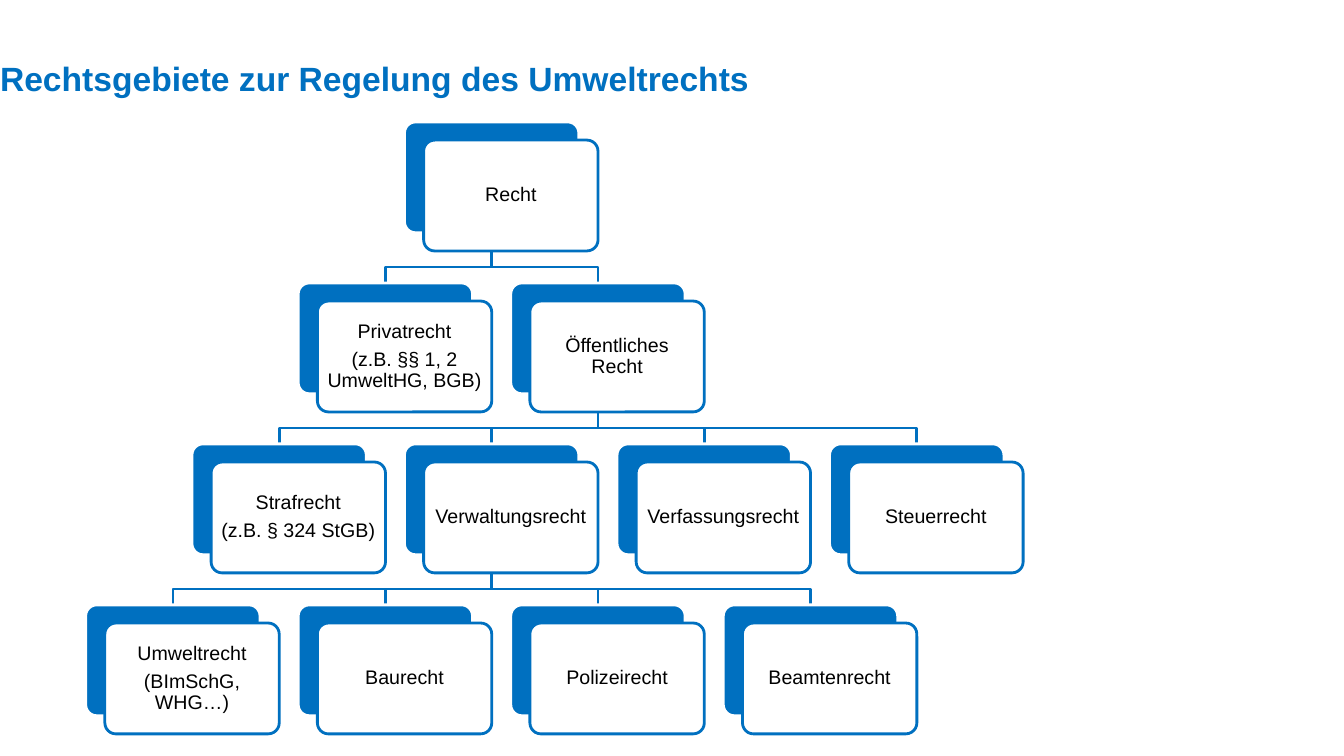
from pptx import Presentation
from pptx.dml.color import RGBColor
from pptx.enum import shapes, text
from pptx.util import Inches, Pt

BLUE = RGBColor(0x00, 0x70, 0xC0)
WHITE = RGBColor(0xFF, 0xFF, 0xFF)
BLACK = RGBColor(0x00, 0x00, 0x00)
FONT = "Arial"

TITLE = "Rechtsgebiete zur Regelung des Umweltrechts"
LEVELS = [
    (None, 3, ["Recht"]),
    ("Recht", 2, ["Privatrecht\n(z.B. §§ 1, 2 UmweltHG, BGB)", "Öffentliches Recht"]),
    ("Öffentliches Recht", 1, ["Strafrecht\n(z.B. § 324 StGB)", "Verwaltungsrecht",
                               "Verfassungsrecht", "Steuerrecht"]),
    ("Verwaltungsrecht", 0, ["Umweltrecht\n(BImSchG, WHG…)", "Baurecht",
                             "Polizeirecht", "Beamtenrecht"]),
]

LEFT, TOP = 0.85, 1.21
HALF_STEP, ROW_STEP = 1.054, 1.597
CARD_WIDTH, CARD_HEIGHT = 1.73, 1.1
OFFSET_X, OFFSET_Y = 0.19, 0.18
ELBOW_DROP = 1.44


def add_branch(page, parent, child):
    start_x, start_y = parent[0] + CARD_WIDTH / 2, parent[1] + CARD_HEIGHT
    end_x, end_y = child[0] + CARD_WIDTH / 2, child[1]
    elbow_y = parent[1] + ELBOW_DROP
    builder = page.shapes.build_freeform(Inches(start_x), Inches(start_y))
    corners = [(start_x, elbow_y), (end_x, elbow_y), (end_x, end_y)]
    builder.add_line_segments([(Inches(x), Inches(y)) for x, y in corners], close=False)
    branch = builder.convert_to_shape()
    branch.shadow.inherit = False
    branch.fill.background()
    branch.line.color.rgb = BLUE
    branch.line.width = Pt(2)


def add_card(page, left, top, fill, line):
    card = page.shapes.add_shape(
        shapes.MSO_SHAPE.ROUNDED_RECTANGLE,
        Inches(left), Inches(top), Inches(CARD_WIDTH), Inches(CARD_HEIGHT))
    card.adjustments[0] = 0.1
    card.shadow.inherit = False
    card.fill.solid()
    card.fill.fore_color.rgb = fill
    card.line.color.rgb = line
    card.line.width = Pt(2)
    return card


def add_label(card, label):
    frame = card.text_frame
    frame.text = label
    frame.word_wrap = True
    frame.vertical_anchor = text.MSO_ANCHOR.MIDDLE
    frame.margin_left = frame.margin_right = Inches(0.05)
    frame.margin_top = frame.margin_bottom = Inches(0.06)
    for para in frame.paragraphs:
        para.alignment = text.PP_ALIGN.CENTER
        para.line_spacing = 0.9
        para.space_after = Pt(5)
        for span in para.runs:
            span.font.name = FONT
            span.font.size = Pt(14)
            span.font.color.rgb = BLACK


def add_title(page):
    box = page.shapes.title
    box.left, box.top = Inches(0), Inches(0.65)
    box.width, box.height = Inches(9.8), Inches(0.4)
    frame = box.text_frame
    frame.text = TITLE
    frame.word_wrap = True
    frame.auto_size = text.MSO_AUTO_SIZE.NONE
    frame.vertical_anchor = text.MSO_ANCHOR.TOP
    frame.margin_left = frame.margin_right = 0
    frame.margin_top = frame.margin_bottom = 0
    para = frame.paragraphs[0]
    para.alignment = text.PP_ALIGN.LEFT
    para.line_spacing = Pt(23.6)
    span = para.runs[0]
    span.font.name = FONT
    span.font.size = Pt(24)
    span.font.bold = True
    span.font.color.rgb = BLUE


def main():
    deck = Presentation()
    deck.slide_width, deck.slide_height = Inches(13.33), Inches(7.5)
    page = deck.slides.add_slide(deck.slide_layouts[5])
    add_title(page)

    places = {}
    for row, (parent, first, labels) in enumerate(LEVELS):
        for index, label in enumerate(labels):
            places[label] = (LEFT + (first + 2 * index) * HALF_STEP, TOP + row * ROW_STEP)

    for parent, first, labels in LEVELS:
        if parent:
            for label in labels:
                add_branch(page, places[parent], places[label])

    for label, (left, top) in places.items():
        add_card(page, left, top, BLUE, WHITE)
        front = add_card(page, left + OFFSET_X, top + OFFSET_Y, WHITE, BLUE)
        add_label(front, label)

    deck.save("out.pptx")


if __name__ == "__main__":
    main()
